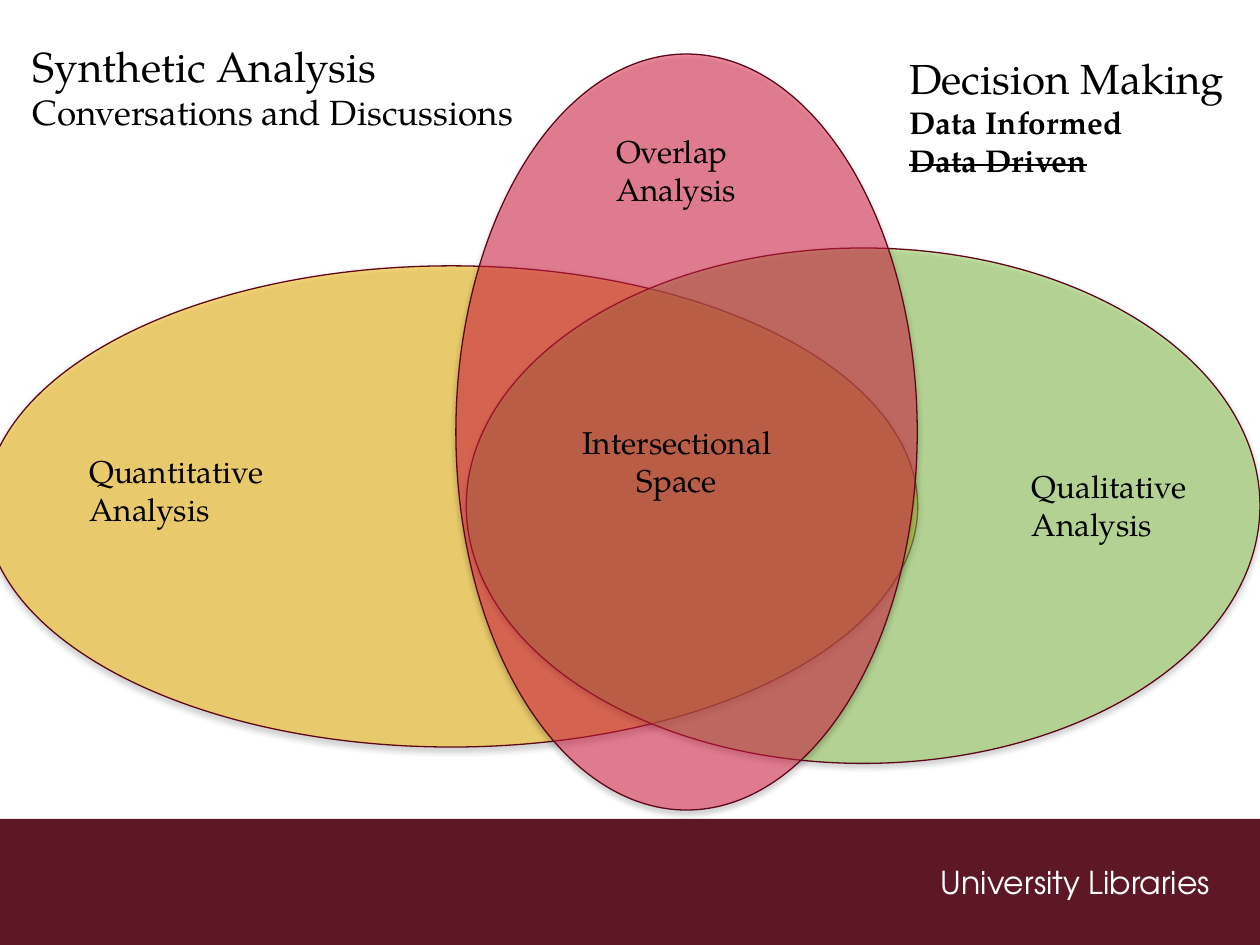
from dataclasses import dataclass

from lxml import etree
from pptx import Presentation
from pptx.dml.color import RGBColor
from pptx.enum.shapes import MSO_SHAPE as Preset
from pptx.enum.text import MSO_AUTO_SIZE as AutoSize, PP_ALIGN as Align
from pptx.oxml.ns import qn
from pptx.util import Cm, Pt


@dataclass(frozen=True)
class Theme:
    band: str = "5D1725"
    outline: str = "5E0718"
    quantitative: str = "FFC000"
    qualitative: str = "92D050"
    overlap: str = "EA2048"
    ink: str = "000000"
    white: str = "FFFFFF"
    body_font: str = "TeX Gyre Pagella"
    footer_font: str = "TeX Gyre Adventor"
    heading: float = 24
    subheading: float = 20
    body: float = 18
    outline_width: float = 0.75
    opacity: int = 49
    shadow_opacity: int = 35
    shadow_blur: float = 3.1
    shadow_distance: float = 1.8


THEME = Theme()


@dataclass(frozen=True)
class Area:
    left: float
    top: float
    width: float
    height: float

    def lengths(self) -> list[Cm]:
        return [Cm(side) for side in (self.left, self.top, self.width, self.height)]


@dataclass(frozen=True)
class Oval:
    area: Area
    color: str
    rotation: float = 0


@dataclass(frozen=True)
class Line:
    text: str
    size: float = THEME.body
    bold: bool = False
    strike: bool = False


@dataclass(frozen=True)
class Label:
    area: Area
    lines: tuple[Line, ...]
    align: Align = Align.LEFT
    wrap: bool = False
    font: str = THEME.body_font
    color: str = THEME.ink


OVALS = (
    Oval(Area(-0.3, 5.36, 18.8, 9.7), THEME.quantitative),
    Oval(Area(9.4, 5, 16, 10.39), THEME.qualitative),
    Oval(Area(6.22, 4.06, 15.24, 9.3), THEME.overlap, rotation=90),
)

LABELS = (
    Label(Area(15.01, 17.27, 9.63, 1.02), (Line("University Libraries"),),
          Align.RIGHT, True, THEME.footer_font, THEME.white),
    Label(Area(1.55, 8.99, 6.48, 1.8), (Line("Quantitative"), Line("Analysis")), wrap=True),
    Label(Area(20.55, 9.3, 5.11, 1.8), (Line("Qualitative"), Line("Analysis")), wrap=True),
    Label(Area(12.17, 2.54, 2.97, 1.8), (Line("Overlap"), Line("Analysis"))),
    Label(Area(11.46, 8.41, 4.37, 1.8), (Line("Intersectional"), Line("Space")), Align.CENTER),
    Label(Area(0.41, 0.69, 10.31, 3.18), (
        Line("Synthetic Analysis", THEME.heading),
        Line("Conversations and Discussions", THEME.subheading),
    )),
    Label(Area(18.08, 0.94, 6.93, 2.82), (
        Line("Decision Making", THEME.heading),
        Line("Data Informed", bold=True),
        Line("Data Driven", bold=True, strike=True),
    )),
)


def set_opacity(color, percent: int) -> None:
    etree.SubElement(color, qn("a:alpha"), val=str(percent * 1000))


def add_shadow(shape) -> None:
    shape.shadow.inherit = False
    effects = shape._element.spPr.find(qn("a:effectLst"))
    shadow = etree.SubElement(
        effects, qn("a:outerShdw"), blurRad=str(Pt(THEME.shadow_blur)),
        dist=str(Pt(THEME.shadow_distance)), dir="5400000", rotWithShape="0")
    color = etree.SubElement(shadow, qn("a:srgbClr"), val=THEME.ink)
    set_opacity(color, THEME.shadow_opacity)


def draw_band(page, area: Area) -> None:
    band = page.shapes.add_shape(Preset.RECTANGLE, *area.lengths())
    band.shadow.inherit = False
    band.fill.solid()
    band.fill.fore_color.rgb = RGBColor.from_string(THEME.band)
    band.line.fill.background()


def draw_oval(page, oval: Oval) -> None:
    shape = page.shapes.add_shape(Preset.OVAL, *oval.area.lengths())
    shape.rotation = oval.rotation
    shape.fill.solid()
    shape.fill.fore_color.rgb = RGBColor.from_string(oval.color)
    set_opacity(shape._element.spPr.find(qn("a:solidFill"))[0], THEME.opacity)
    shape.line.color.rgb = RGBColor.from_string(THEME.outline)
    shape.line.width = Pt(THEME.outline_width)
    add_shadow(shape)


def draw_label(page, label: Label) -> None:
    box = page.shapes.add_textbox(*label.area.lengths())
    frame = box.text_frame
    frame.word_wrap = label.wrap
    frame.auto_size = AutoSize.SHAPE_TO_FIT_TEXT
    para = frame.paragraphs[0]
    para.text = "\v".join(line.text for line in label.lines)
    para.alignment = label.align
    for span, line in zip(para.runs, label.lines):
        span.font.name = label.font
        span.font.size = Pt(line.size)
        span.font.bold = line.bold
        span.font.color.rgb = RGBColor.from_string(label.color)
        if line.strike:
            span._r.get_or_add_rPr().set("strike", "sngStrike")


def main() -> None:
    deck = Presentation()
    deck.slide_width, deck.slide_height = Cm(25.4), Cm(19.05)
    page = deck.slides.add_slide(deck.slide_layouts[6])
    draw_band(page, Area(0, 16.51, 25.4, 2.54))
    for oval in OVALS:
        draw_oval(page, oval)
    for label in LABELS:
        draw_label(page, label)
    deck.save("out.pptx")


if __name__ == "__main__":
    main()
